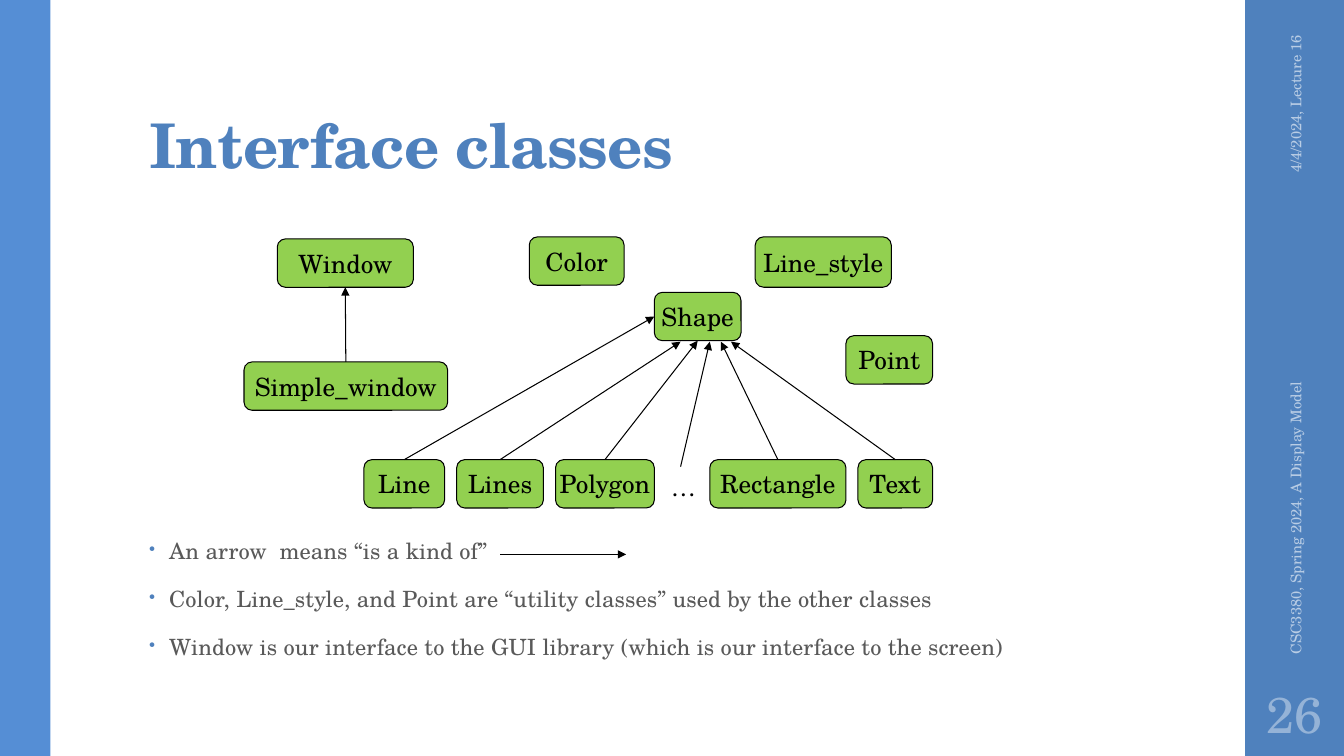
import pptx
import pptx.util
import pptx.dml.color
import pptx.enum.shapes
import pptx.enum.text
import pptx.oxml.ns
from lxml import etree

Inches = pptx.util.Inches
Pt = pptx.util.Pt
SHAPES = pptx.enum.shapes.MSO_SHAPE
ALIGN = pptx.enum.text.PP_ALIGN
ANCHOR = pptx.enum.text.MSO_ANCHOR
qn = pptx.oxml.ns.qn
FONT = "TeX Gyre Schola"
TOP, LEFT, BOTTOM = 0, 1, 2


def color(hex_string):
    return pptx.dml.color.RGBColor.from_string(hex_string)


def write(shape, lines, size, hex_string, align=ALIGN.LEFT, anchor=ANCHOR.MIDDLE, tracking=0):
    frame = shape.text_frame
    frame.text = "\n".join(lines)
    frame.vertical_anchor = anchor
    for paragraph in frame.paragraphs:
        paragraph.alignment = align
        font = paragraph.runs[0].font
        font.name, font.size = FONT, Pt(size)
        font.color.rgb = color(hex_string)
        if tracking:
            paragraph.runs[0]._r.get_or_add_rPr().set("spc", str(tracking))
    return frame


presentation = pptx.Presentation()
presentation.slide_width, presentation.slide_height = Inches(13.33), Inches(7.5)
slide = presentation.slides.add_slide(presentation.slide_layouts[6])
shapes = slide.shapes

# Side bands
for left, width, fill in [(12.35, 0.98, "4F81BD"), (0, 0.5, "558ED5")]:
    band = shapes.add_shape(SHAPES.RECTANGLE, Inches(left), 0, Inches(width), Inches(7.5))
    band.shadow.inherit = False
    band.fill.solid()
    band.fill.fore_color.rgb = color(fill)
    band.line.fill.background()

# Title
title = shapes.add_textbox(Inches(1.38), Inches(0.32), Inches(10.6), Inches(1.53))
frame = write(title, ["Interface classes"], 44, "4F81BD", anchor=ANCHOR.BOTTOM, tracking=-50)
frame.word_wrap = True
frame.margin_top = Inches(0.03)
frame.paragraphs[0].line_spacing = 0.9
frame.paragraphs[0].runs[0].font.bold = True

# Bullets
bullets = shapes.add_textbox(Inches(1.38), Inches(5.3), Inches(9.4), Inches(1.46))
frame = write(bullets, [
    "An arrow  means “is a kind of”",
    "Color, Line_style, and Point are “utility classes” used by the other classes",
    "Window is our interface to the GUI library (which is our interface to the screen)",
], 16, "595959", anchor=ANCHOR.TOP, tracking=10)
frame.word_wrap = True
for index, paragraph in enumerate(frame.paragraphs):
    paragraph.line_spacing = 0.95
    paragraph.space_before = Pt(14 if index else 0)
    paragraph.space_after = Pt(2)
    properties = paragraph._p.get_or_add_pPr()
    properties.set("marL", str(Inches(0.2)))
    properties.set("indent", str(Inches(-0.2)))
    bullet_color = etree.SubElement(properties, qn("a:buClr"))
    etree.SubElement(bullet_color, qn("a:srgbClr"), val="4F81BD")
    etree.SubElement(properties, qn("a:buSzPct"), val="80000")
    etree.SubElement(properties, qn("a:buChar"), char="•")

# Date and footer, turned to read upwards
for text, left, top, width, align in [
    ("4/4/2024, Lecture 16", 11.81, 1.09, 2.08, ALIGN.RIGHT),
    ("CSC3380, Spring 2024, A Display Model", 10.89, 4.43, 3.92, ALIGN.LEFT),
]:
    label = shapes.add_textbox(Inches(left), Inches(top), Inches(width), Inches(0.4))
    label.rotation = 270
    write(label, [text], 10.5, "B9CDE5", align).word_wrap = True

# Slide number
number = shapes.add_textbox(Inches(12.35), Inches(6.75), Inches(0.98), Inches(0.65))
frame = write(number, ["26"], 36, "95B3D7", ALIGN.CENTER)
frame.word_wrap = True
frame.margin_left = frame.margin_right = Inches(0.05)

# Class boxes
classes = {}
for name, left, top, width, height in [
    ("Window", 2.75, 2.37, 1.35, 0.48),
    ("Simple_window", 2.42, 3.59, 2.02, 0.48),
    ("Color", 5.25, 2.35, 0.94, 0.48),
    ("Line_style", 7.49, 2.35, 1.35, 0.5),
    ("Shape", 6.49, 2.9, 0.86, 0.48),
    ("Point", 8.39, 3.33, 0.86, 0.48),
    ("Line", 3.61, 4.56, 0.8, 0.48),
    ("Lines", 4.53, 4.56, 0.86, 0.48),
    ("Polygon", 5.51, 4.56, 0.98, 0.48),
    ("Rectangle", 7.04, 4.56, 1.35, 0.48),
    ("Text", 8.51, 4.56, 0.74, 0.48),
]:
    box = shapes.add_shape(SHAPES.ROUNDED_RECTANGLE, Inches(left), Inches(top),
                           Inches(width), Inches(height))
    box.shadow.inherit = False
    box.fill.solid()
    box.fill.fore_color.rgb = color("92D050")
    box.line.color.rgb = color("000000")
    box.line.width = Pt(0.75)
    write(box, [name], 18, "000000", ALIGN.CENTER).word_wrap = False
    classes[name] = box

ellipsis = shapes.add_textbox(Inches(6.38), Inches(4.63), Inches(0.8), Inches(0.4))
write(ellipsis, ["…"], 18, "000000", ALIGN.CENTER, ANCHOR.TOP).word_wrap = True

# Arrows: start class, start point, end point, end class and side
for child, x1, y1, x2, y2, parent, side in [
    ("Simple_window", 3.43, 3.59, 3.43, 2.85, "Window", BOTTOM),
    ("Line", 4.01, 4.56, 6.49, 3.14, "Shape", LEFT),
    ("Lines", 4.96, 4.56, 6.75, 3.39, None, None),
    ("Polygon", 6, 4.56, 6.92, 3.38, "Shape", BOTTOM),
    (None, 6.75, 4.63, 7.04, 3.39, None, None),
    ("Rectangle", 7.72, 4.56, 7.15, 3.39, None, None),
    ("Text", 8.88, 4.56, 7.25, 3.39, None, None),
    (None, 4.96, 5.5, 6.21, 5.5, None, None),
]:
    arrow = shapes.add_connector(pptx.enum.shapes.MSO_CONNECTOR.STRAIGHT,
                                 Inches(x1), Inches(y1), Inches(x2), Inches(y2))
    if child:
        arrow.begin_connect(classes[child], TOP)
    if parent:
        arrow.end_connect(classes[parent], side)
    arrow.line.color.rgb = color("000000")
    arrow.line.width = Pt(0.75)
    etree.SubElement(arrow.line._get_or_add_ln(), qn("a:tailEnd"), type="triangle")
    etree.SubElement(arrow._element.spPr, qn("a:effectLst"))

presentation.save("out.pptx")
